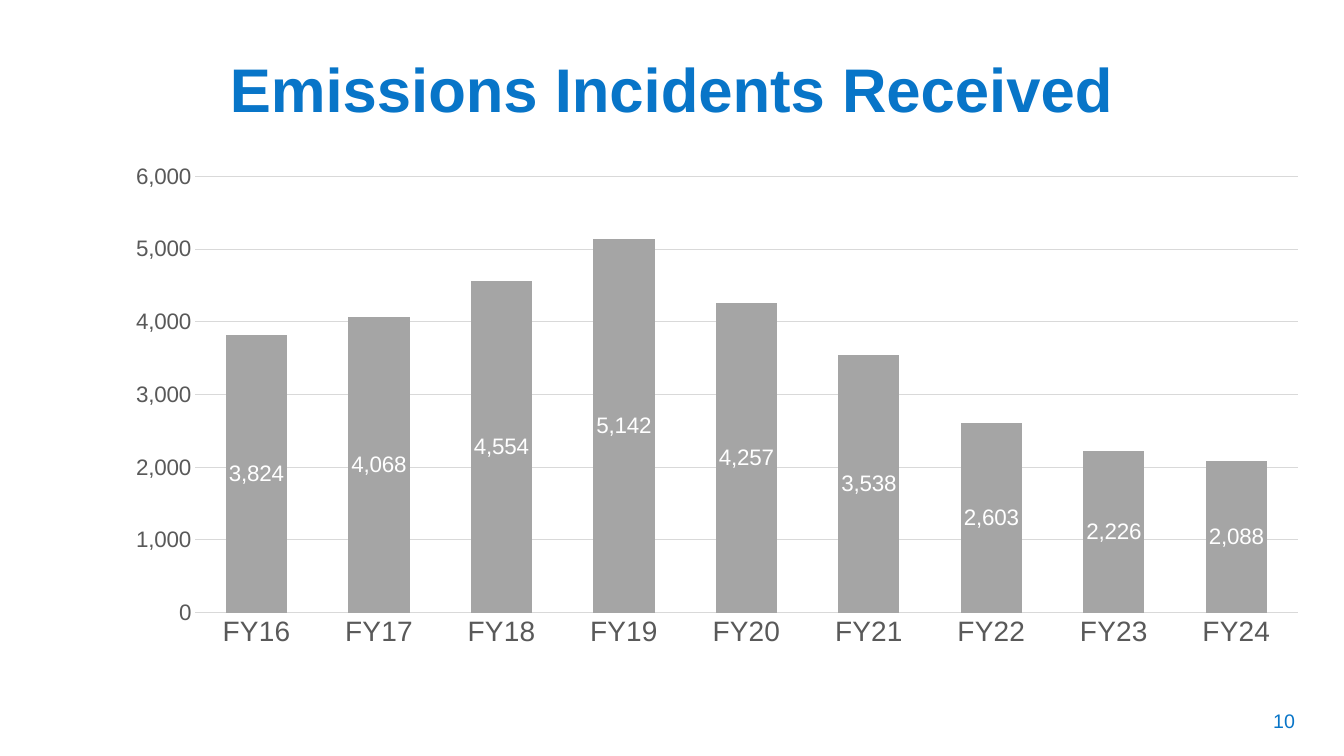
import pptx
import pptx.chart.data
import pptx.dml.color
import pptx.enum.chart
import pptx.enum.text
import pptx.util
from dataclasses import dataclass

Inches = pptx.util.Inches
Pt = pptx.util.Pt


@dataclass(frozen=True)
class Theme:
    font: str = "Arial"
    blue: str = "0875C8"
    bar: str = "A5A5A5"
    rule: str = "D9D9D9"
    axis_text: str = "595959"
    label_text: str = "FFFFFF"
    chart_text: str = "000000"
    title_size: int = 44
    category_size: int = 20
    value_size: int = 16
    number_size: int = 14


THEME = Theme()
INCIDENTS = {
    "FY16": 3824, "FY17": 4068, "FY18": 4554, "FY19": 5142, "FY20": 4257,
    "FY21": 3538, "FY22": 2603, "FY23": 2226, "FY24": 2088,
}


def rgb(value):
    return pptx.dml.color.RGBColor.from_string(value)


def apply(target, settings):
    for name, value in settings.items():
        setattr(target, name, value)


def style_font(font, size, color, bold=False):
    apply(font, {"name": THEME.font, "size": Pt(size), "bold": bold})
    font.color.rgb = rgb(color)


def style_line(line):
    line.color.rgb = rgb(THEME.rule)
    line.width = Pt(0.75)


def add_label(slide, text, box, size, bold=False, spacing=1.0):
    frame = slide.shapes.add_textbox(*map(Inches, box)).text_frame
    apply(frame, {
        "word_wrap": True,
        "vertical_anchor": pptx.enum.text.MSO_ANCHOR.MIDDLE,
    })
    paragraph = frame.paragraphs[0]
    apply(paragraph, {
        "text": text,
        "alignment": pptx.enum.text.PP_ALIGN.CENTER,
        "line_spacing": spacing,
    })
    style_font(paragraph.font, size, THEME.blue, bold)


def style_axis(axis, size):
    apply(axis, {
        "major_tick_mark": pptx.enum.chart.XL_TICK_MARK.NONE,
        "minor_tick_mark": pptx.enum.chart.XL_TICK_MARK.NONE,
    })
    style_font(axis.tick_labels.font, size, THEME.axis_text)


def add_incident_chart(slide, box):
    incidents = pptx.chart.data.CategoryChartData(number_format="#,##0")
    incidents.categories = list(INCIDENTS)
    incidents.add_series("Series 1", list(INCIDENTS.values()))
    chart = slide.shapes.add_chart(
        pptx.enum.chart.XL_CHART_TYPE.COLUMN_CLUSTERED,
        *map(Inches, box), incidents).chart
    apply(chart, {"has_legend": False, "has_title": False})
    style_font(chart.font, THEME.category_size, THEME.chart_text)

    years, counts = chart.category_axis, chart.value_axis
    style_axis(years, THEME.category_size)
    style_line(years.format.line)
    style_axis(counts, THEME.value_size)
    counts.format.line.fill.background()
    apply(counts, {"minimum_scale": 0, "has_major_gridlines": True})
    style_line(counts.major_gridlines.format.line)
    number_format = {"number_format": "#,##0", "number_format_is_linked": False}
    apply(counts.tick_labels, number_format)

    bars = chart.plots[0]
    apply(bars, {"gap_width": 100, "overlap": -10, "vary_by_categories": False})
    received = bars.series[0]
    received.format.fill.solid()
    received.format.fill.fore_color.rgb = rgb(THEME.bar)
    apply(received.data_labels, {
        "show_value": True,
        "position": pptx.enum.chart.XL_LABEL_POSITION.CENTER,
        **number_format,
    })
    style_font(received.data_labels.font, THEME.value_size, THEME.label_text)


def main():
    deck = pptx.Presentation()
    apply(deck, {"slide_width": Inches(13.33), "slide_height": Inches(7.5)})
    slide = deck.slides.add_slide(deck.slide_layouts[6])
    add_label(slide, "10", (12.29, 6.95, 0.89, 0.4), THEME.number_size)
    add_label(slide, "Emissions Incidents Received", (0.69, 0.54, 11.95, 0.76),
              THEME.title_size, bold=True, spacing=0.9)
    add_incident_chart(slide, (1.11, 1.53, 12, 5))
    deck.save("out.pptx")


if __name__ == "__main__":
    main()
